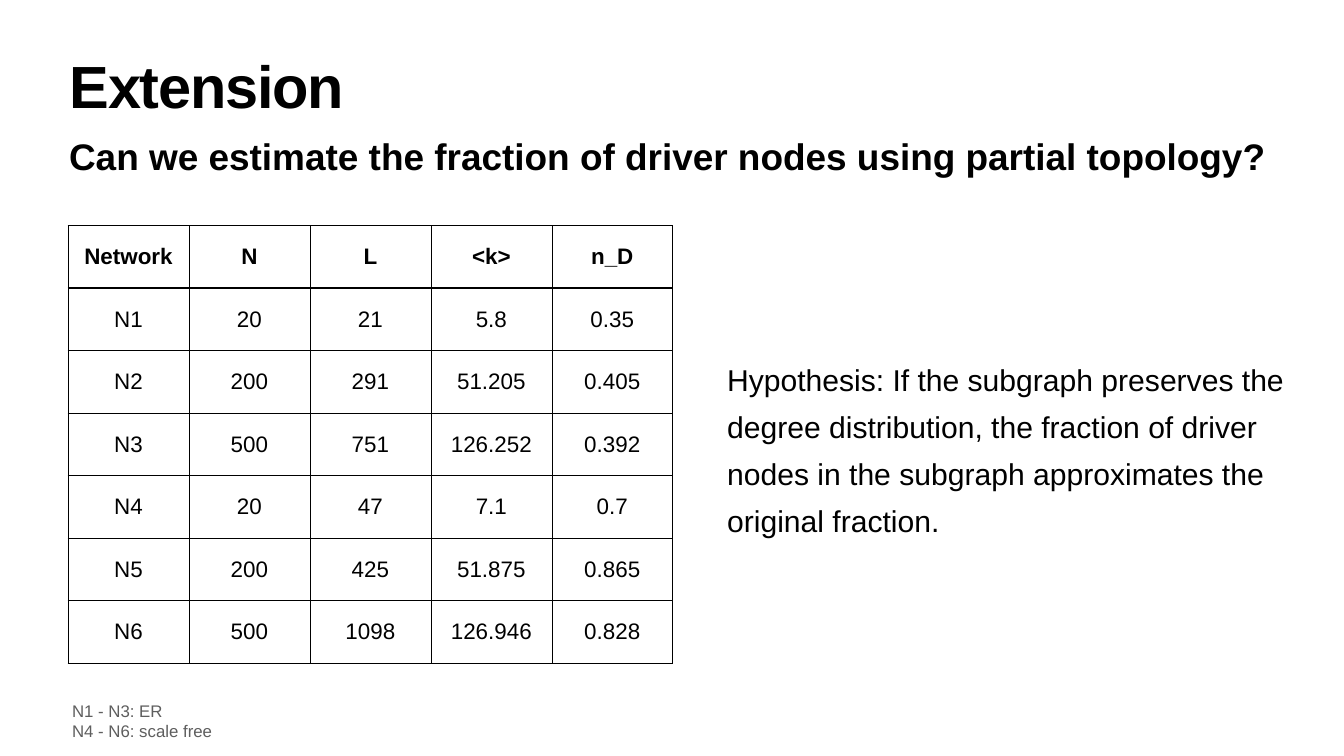
import pptx
import pptx.dml.color
import pptx.enum.text
import pptx.oxml
import pptx.oxml.ns
import pptx.util
from pptx.util import Inches

FONT = "Arial"
BLACK, GREY, WHITE = "000000", "5E5E5E", "FFFFFF"
TOP = pptx.enum.text.MSO_ANCHOR.TOP
MIDDLE = pptx.enum.text.MSO_ANCHOR.MIDDLE

# Content
TITLE = "Extension"
QUESTION = "Can we estimate the fraction of driver nodes using partial topology?"
HYPOTHESIS = (
    "Hypothesis: If the subgraph preserves the degree distribution, "
    "the fraction of driver nodes in the subgraph approximates the "
    "original fraction."
)
NETWORK_TYPES = ["N1 - N3: ER", "N4 - N6: scale free"]
NETWORKS = [
    ("Network", "N", "L", "<k>", "n_D"),
    ("N1", "20", "21", "5.8", "0.35"),
    ("N2", "200", "291", "51.205", "0.405"),
    ("N3", "500", "751", "126.252", "0.392"),
    ("N4", "20", "47", "7.1", "0.7"),
    ("N5", "200", "425", "51.875", "0.865"),
    ("N6", "500", "1098", "126.946", "0.828"),
]

# Table geometry, in inches
TABLE_LEFT, TABLE_TOP = 1.35, 4.48
COLUMN_WIDTH, ROW_HEIGHT = 2.4, 1.24
THIN, THICK = 1, 3


def color(value):
    return pptx.dml.color.RGBColor.from_string(value)


def style(paragraph, size, ink=BLACK, bold=False):
    font = paragraph.font
    font.name, font.size, font.bold = FONT, pptx.util.Pt(size), bold
    font.color.rgb = color(ink)


def set_margins(target, inset):
    for side in ("left", "top", "right", "bottom"):
        setattr(target, f"margin_{side}", Inches(inset))


def add_text(slide, box, lines, size, ink=BLACK, bold=False, anchor=TOP,
             inset=0.06, spacing=None, wrap=True):
    shape = slide.shapes.add_textbox(*(Inches(length) for length in box))
    frame = shape.text_frame
    frame.word_wrap = wrap
    frame.vertical_anchor = anchor
    set_margins(frame, inset)
    frame.text = "\n".join(lines)
    for paragraph in frame.paragraphs:
        style(paragraph, size, ink, bold)
        if spacing:
            paragraph.line_spacing = spacing
    return shape


def set_borders(cell, widths):
    properties = cell._tc.get_or_add_tcPr()
    # Borders come before the fill in the cell properties
    for index, (side, width) in enumerate(widths.items()):
        line = pptx.oxml.parse_xml(
            f'<a:{side} {pptx.oxml.ns.nsdecls("a")} w="{pptx.util.Pt(width)}">'
            f'<a:solidFill><a:srgbClr val="{BLACK}"/></a:solidFill></a:{side}>'
        )
        properties.insert(index, line)


def add_network_table(slide):
    row_count, column_count = len(NETWORKS), len(NETWORKS[0])
    table = slide.shapes.add_table(
        row_count, column_count, Inches(TABLE_LEFT), Inches(TABLE_TOP),
        Inches(COLUMN_WIDTH * column_count), Inches(ROW_HEIGHT * row_count),
    ).table
    table.horz_banding = False
    for row, values in enumerate(NETWORKS):
        for column, value in enumerate(values):
            cell = table.cell(row, column)
            cell.text = value
            cell.vertical_anchor = MIDDLE
            set_margins(cell, 0.06)
            paragraph = cell.text_frame.paragraphs[0]
            paragraph.alignment = pptx.enum.text.PP_ALIGN.CENTER
            style(paragraph, 32, bold=row == 0)
            cell.fill.background()
            # A heavier rule separates the header from the data
            set_borders(cell, {
                "lnL": THIN,
                "lnR": THIN,
                "lnT": THICK if row == 1 else THIN,
                "lnB": THICK if row == 0 else THIN,
            })


def main():
    presentation = pptx.Presentation()
    presentation.slide_width = Inches(26.67)
    presentation.slide_height = Inches(15)
    slide = presentation.slides.add_slide(presentation.slide_layouts[6])
    slide.background.fill.solid()
    slide.background.fill.fore_color.rgb = color(WHITE)

    # Headings
    title = add_text(slide, (1.32, 1.18, 24.03, 1.57), [TITLE], 85,
                     bold=True, spacing=0.8)
    run = title.text_frame.paragraphs[0].runs[0]
    run.font._element.set("spc", "-170")  # tight letter spacing
    add_text(slide, (1.32, 2.6, 24.03, 1.02), [QUESTION], 52.8,
             bold=True, inset=0.05)

    # Networks and their key
    add_network_table(slide)
    add_text(slide, (1.37, 13.85, 2.91, 0.91), NETWORK_TYPES, 24, GREY,
             anchor=MIDDLE, wrap=False)

    # Hypothesis
    add_text(slide, (14.37, 6.59, 11.76, 4.47), [HYPOTHESIS], 43,
             anchor=MIDDLE, spacing=1.3)

    presentation.save("out.pptx")


if __name__ == "__main__":
    main()
